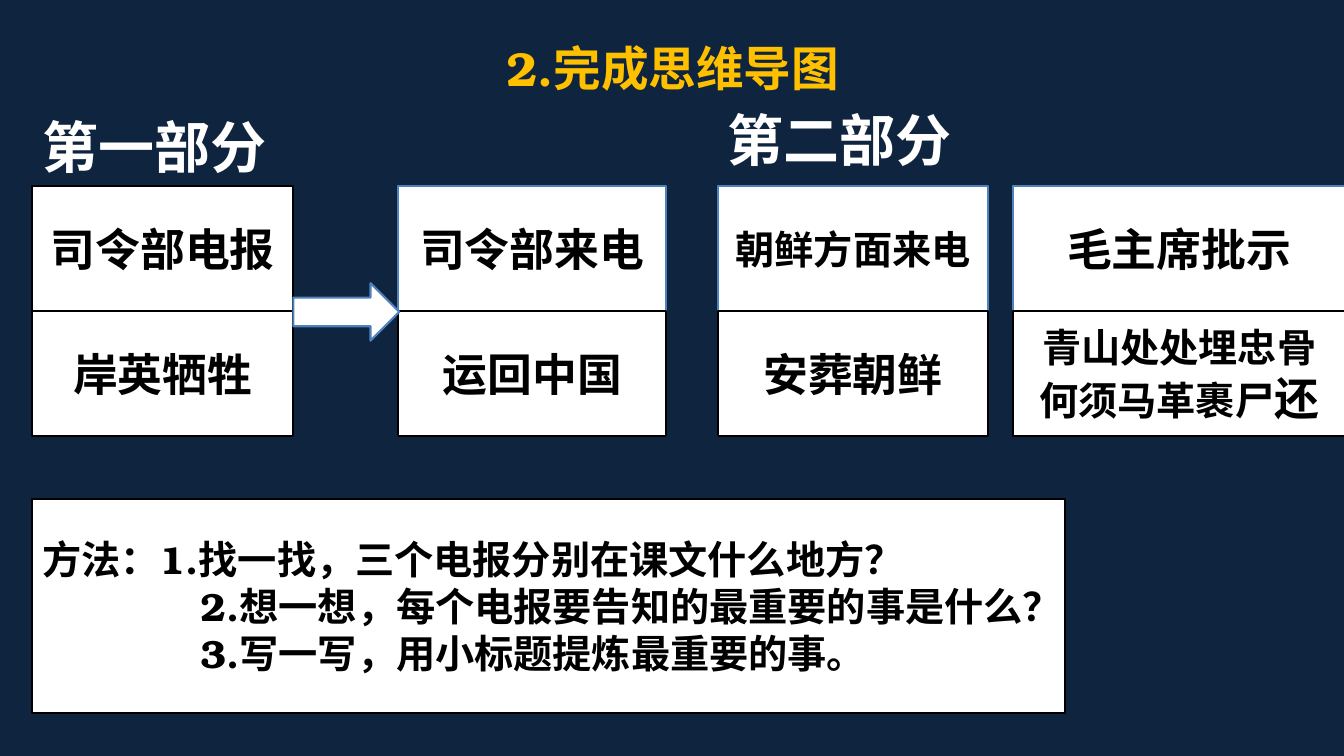
from dataclasses import dataclass

from pptx import Presentation
from pptx.dml.color import RGBColor
from pptx.enum.shapes import MSO_SHAPE
from pptx.enum.text import MSO_ANCHOR, MSO_AUTO_SIZE, PP_ALIGN
from pptx.oxml.ns import qn
from pptx.util import Inches, Pt

RECT, ARROW = MSO_SHAPE.RECTANGLE, MSO_SHAPE.RIGHT_ARROW
TOP, MIDDLE = MSO_ANCHOR.TOP, MSO_ANCHOR.MIDDLE
LEFT, CENTER = PP_ALIGN.LEFT, PP_ALIGN.CENTER
FONT = "TeX Gyre Bonum"
NAVY, WHITE, BLACK, BLUE, GOLD = "0F243E", "FFFFFF", "000000", "4F81BD", "FFC000"
ROW_TOP, ROW_HEIGHT = 1.85, 1.24


@dataclass
class Telegram:
    """One column: a telegram above the main point it carries."""
    left: float
    width: float
    source: str
    point: str
    source_size: int = 32
    point_size: int = 32
    border: str = BLUE


TELEGRAMS = [
    Telegram(0.32, 2.59, "司令部电报", "岸英牺牲", border=BLACK),
    Telegram(3.95, 2.66, "司令部来电", "运回中国"),
    Telegram(7.12, 2.68, "朝鲜方面来电", "安葬朝鲜", source_size=28),
    Telegram(10.05, 3.29, "毛主席批示", "青山处处埋忠骨\n何须马革裹尸", point_size=28),
]
PARTS = [(0.32, 1.07, "第一部分"), (7.12, 1.0, "第二部分")]
METHOD = """方法：1.找一找，三个电报分别在课文什么地方？
2.想一想，每个电报要告知的最重要的事是什么？
3.写一写，用小标题提炼最重要的事。"""


def rgb(color: str) -> RGBColor:
    """Turn a hex string into a colour."""
    return RGBColor.from_string(color)


def add_run(p, text: str, *, size: int, color: str = BLACK) -> None:
    """Add a bold run in the slide font for both Latin and Chinese."""
    r = p.add_run()
    r.text = text
    r.font.name, r.font.size, r.font.bold = FONT, Pt(size), True
    r.font.color.rgb = rgb(color)
    ea = r.font._element.makeelement(qn("a:ea"), {"typeface": FONT})
    r.font._element.find(qn("a:latin")).addnext(ea)


def write(tf, text: str, *, size: int, color: str = BLACK, align=CENTER, anchor=MIDDLE) -> None:
    """Write each line of text as a paragraph."""
    tf.vertical_anchor = anchor
    for i, line in enumerate(text.split("\n")):
        p = tf.paragraphs[0] if i == 0 else tf.add_paragraph()
        p.alignment = align
        add_run(p, line, size=size, color=color)


def add_block(s, left: float, top: float, width: float, height: float,
              *, kind=RECT, border: str = BLACK):
    """Add a white shape with a thin border."""
    sp = s.shapes.add_shape(kind, Inches(left), Inches(top), Inches(width), Inches(height))
    sp.shadow.inherit = False
    sp.fill.solid()
    sp.fill.fore_color.rgb = rgb(WHITE)
    sp.line.color.rgb = rgb(border)
    sp.line.width = Pt(1.5)
    return sp


def add_title(s, text: str) -> None:
    """Place and format the title."""
    sp = s.shapes.title
    sp.left, sp.top, sp.width, sp.height = Inches(0.92), Inches(0.4), Inches(11.5), Inches(0.99)
    write(sp.text_frame, text, size=34, color=GOLD, anchor=TOP)
    sp.text_frame.paragraphs[0].line_spacing = 0.9


def add_part(s, left: float, top: float, text: str) -> None:
    """Add a part heading."""
    sp = s.shapes.add_textbox(Inches(left), Inches(top), Inches(2.45), Inches(0.77))
    tf = sp.text_frame
    tf.word_wrap = False
    tf.auto_size = MSO_AUTO_SIZE.SHAPE_TO_FIT_TEXT
    write(tf, text, size=40, color=WHITE, align=LEFT, anchor=TOP)


def add_telegram(s, t: Telegram):
    """Add a telegram column and return the text frame of its main point."""
    source = add_block(s, t.left, ROW_TOP, t.width, ROW_HEIGHT, border=t.border)
    write(source.text_frame, t.source, size=t.source_size)
    point = add_block(s, t.left, ROW_TOP + ROW_HEIGHT, t.width, ROW_HEIGHT)
    write(point.text_frame, t.point, size=t.point_size)
    return point.text_frame


def add_method(s) -> None:
    """Add the method box with its later steps indented."""
    tf = add_block(s, 0.32, 4.95, 10.24, 2.12).text_frame
    tf.margin_right = Inches(0)
    write(tf, METHOD, size=28, align=LEFT)
    for p in tf.paragraphs[1:]:
        p._p.get_or_add_pPr().set("marL", str(Inches(1.57)))


def main() -> None:
    """Build and save the slide."""
    prs = Presentation()
    prs.slide_width, prs.slide_height = Inches(13.33), Inches(7.5)
    s = prs.slides.add_slide(prs.slide_layouts[5])
    s.background.fill.solid()
    s.background.fill.fore_color.rgb = rgb(NAVY)
    add_title(s, "2.完成思维导图")
    for left, top, text in PARTS:
        add_part(s, left, top, text)
    points = [add_telegram(s, t) for t in TELEGRAMS]
    add_run(points[-1].paragraphs[-1], "还", size=32)
    add_block(s, 2.91, 2.81, 1.05, 0.57, kind=ARROW, border=BLUE)
    add_method(s)
    prs.save("out.pptx")


if __name__ == "__main__":
    main()
